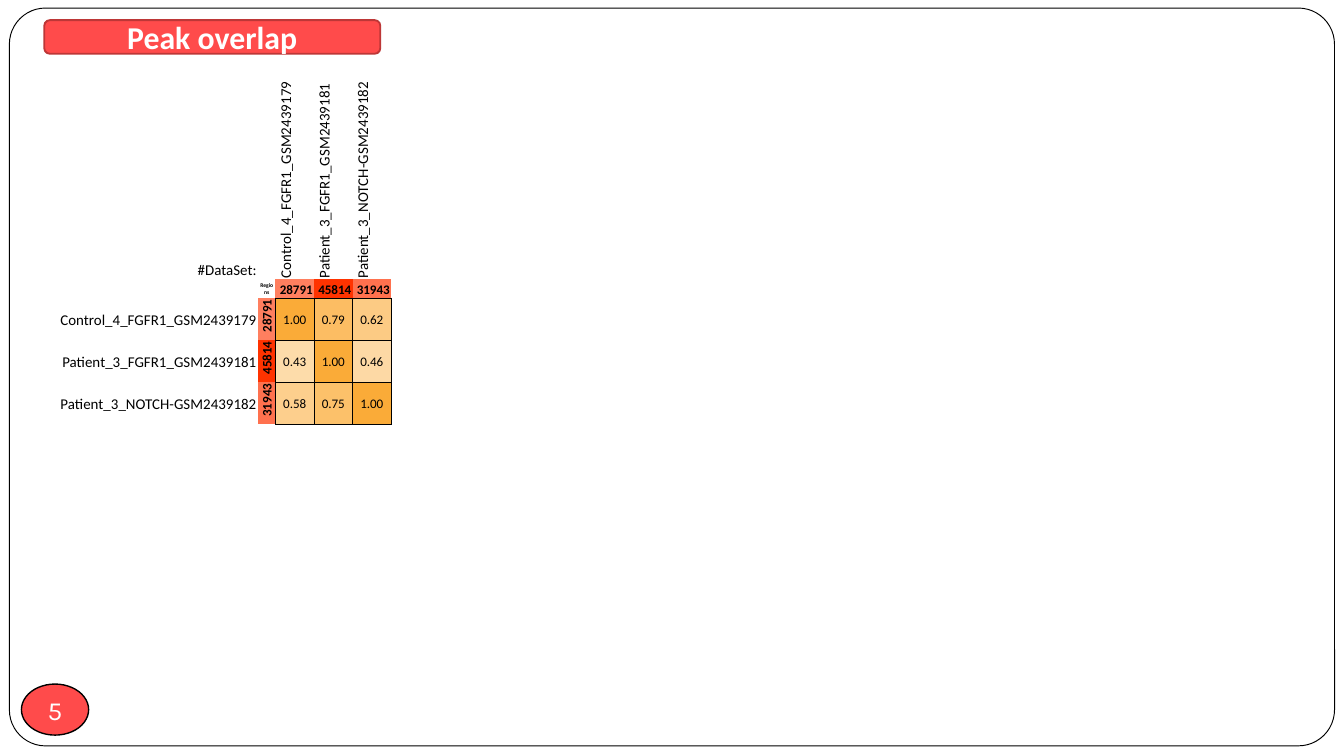
from lxml.etree import SubElement
from pptx import Presentation
from pptx.dml.color import RGBColor
from pptx.enum.shapes import MSO_SHAPE
from pptx.enum.text import MSO_ANCHOR, PP_ALIGN
from pptx.oxml.ns import qn
from pptx.util import Inches, Pt

COLOURS = {
    "white": "FFFFFF", "black": "000000", "red": "FF4B4B", "dark red": "BD3737",
    "28791": "FF7F5F", "45814": "FF3300", "31943": "FF714E",
    "1.00": "FAAB38", "0.79": "FCBD63", "0.75": "FCC16A", "0.62": "FCCB84",
    "0.58": "FDCF8D", "0.46": "FDD9A5", "0.43": "FDDCAA",
}
DATASETS = [
    ("Control_4_FGFR1_GSM2439179", "28791"),
    ("Patient_3_FGFR1_GSM2439181", "45814"),
    ("Patient_3_NOTCH-GSM2439182", "31943"),
]
OVERLAPS = [
    ["1.00", "0.79", "0.62"],
    ["0.43", "1.00", "0.46"],
    ["0.58", "0.75", "1.00"],
]
COLUMN_WIDTHS = [1.59, 0.13] + [0.86 / 3] * 3
ROW_HEIGHTS = [1.77, 0.14] + [0.94 / 3] * 3
NO_STYLE = "{2D5ABB26-0587-4C30-8999-92F81FD0307C}"


def colour(name):
    return RGBColor.from_string(COLOURS[name])


class SlideBuilder:
    font = "Calibri"

    def __init__(self, slide):
        self.slide = slide

    def add_run(self, paragraph, text, size, bold=False, name="black", font=None):
        run = paragraph.add_run()
        run.text = text
        run.font.name = font or self.font
        run.font.size = Pt(size)
        run.font.bold = bold
        run.font.color.rgb = colour(name)

    def add_shape(self, kind, box, fill, line, width, radius=None):
        shape = self.slide.shapes.add_shape(kind, *map(Inches, box))
        shape.shadow.inherit = False
        shape.fill.solid()
        shape.fill.fore_color.rgb = colour(fill)
        shape.line.color.rgb = colour(line)
        shape.line.width = Pt(width)
        if radius is not None:
            shape.adjustments[0] = radius
        return shape

    def add_label(self, shape, text, size, bold=False, font=None):
        frame = shape.text_frame
        frame.vertical_anchor = MSO_ANCHOR.MIDDLE
        paragraph = frame.paragraphs[0]
        paragraph.alignment = PP_ALIGN.CENTER
        self.add_run(paragraph, text, size, bold, "white", font)
        return frame

    def add_table(self, left, top, widths, heights):
        frame = self.slide.shapes.add_table(
            len(heights), len(widths), Inches(left), Inches(top),
            Inches(sum(widths)), Inches(sum(heights)))
        table = frame.table
        table.first_row = table.horz_banding = False
        table._tbl.tblPr.find(qn("a:tableStyleId")).text = NO_STYLE
        for column, width in zip(table.columns, widths):
            column.width = Inches(width)
        for row, height in zip(table.rows, heights):
            row.height = Inches(height)
        for cell in table.iter_cells():
            cell.margin_left = cell.margin_right = cell.margin_top = Inches(0.01)
            cell.margin_bottom = 0
            cell.fill.background()
            paragraph = cell.text_frame.paragraphs[0]
            SubElement(paragraph._p, qn("a:endParaRPr")).set("sz", "300")
        return table

    def fill_cell(self, cell, text, size, align, anchor=MSO_ANCHOR.MIDDLE,
                  bold=False, upright=False, borders="", shaded=False):
        cell.vertical_anchor = anchor
        paragraph = cell.text_frame.paragraphs[0]
        paragraph.alignment = align
        self.add_run(paragraph, text, size, bold)
        properties = cell._tc.get_or_add_tcPr()
        if upright:
            properties.set("vert", "vert270")
        for position, side in enumerate(borders):
            line = SubElement(properties, qn(f"a:ln{side}"), w=str(Pt(0.5)))
            fill = SubElement(line, qn("a:solidFill"))
            SubElement(fill, qn("a:srgbClr"), val=COLOURS["black"])
            properties.insert(position, line)
        if shaded:
            cell.fill.solid()
            cell.fill.fore_color.rgb = colour(text)


def main():
    presentation = Presentation()
    presentation.slide_width = Inches(10)
    presentation.slide_height = Inches(10 * 9 / 16)
    builder = SlideBuilder(presentation.slides.add_slide(presentation.slide_layouts[6]))

    builder.add_shape(MSO_SHAPE.ROUNDED_RECTANGLE, (0.07, 0.06, 9.86, 5.49),
                      "white", "black", 0.5, 0.049)
    badge = builder.add_shape(MSO_SHAPE.OVAL, (0.16, 5.09, 0.5, 0.38), "red", "black", 0.75)
    number = builder.add_label(badge, "5", 14, font="Karla")
    number.word_wrap = False
    number.margin_left = number.margin_right = number.margin_top = number.margin_bottom = 0

    table = builder.add_table(0.33, 0.31, COLUMN_WIDTHS, ROW_HEIGHTS)
    left, centre, right = PP_ALIGN.LEFT, PP_ALIGN.CENTER, PP_ALIGN.RIGHT
    bottom = MSO_ANCHOR.BOTTOM
    builder.fill_cell(table.cell(0, 0), "#DataSet:", 8, right, bottom)
    builder.fill_cell(table.cell(1, 1), "Regions", 3, centre, bold=True)
    for index, (dataset, regions) in enumerate(DATASETS, start=2):
        builder.fill_cell(table.cell(0, index), dataset, 8, left, bottom, upright=True)
        builder.fill_cell(table.cell(1, index), regions, 7, right, bottom,
                          bold=True, borders="B", shaded=True)
        builder.fill_cell(table.cell(index, 0), dataset, 8, right)
        builder.fill_cell(table.cell(index, 1), regions, 7, right, bottom,
                          bold=True, upright=True, borders="R", shaded=True)
    for row, values in enumerate(OVERLAPS, start=2):
        for column, value in enumerate(values, start=2):
            builder.fill_cell(table.cell(row, column), value, 7, centre,
                              borders="LRTB", shaded=True)

    title = builder.add_shape(MSO_SHAPE.ROUNDED_RECTANGLE, (0.33, 0.15, 2.5, 0.25),
                              "red", "dark red", 1)
    builder.add_label(title, "Peak overlap", 17, bold=True)
    presentation.save("out.pptx")


if __name__ == "__main__":
    main()
